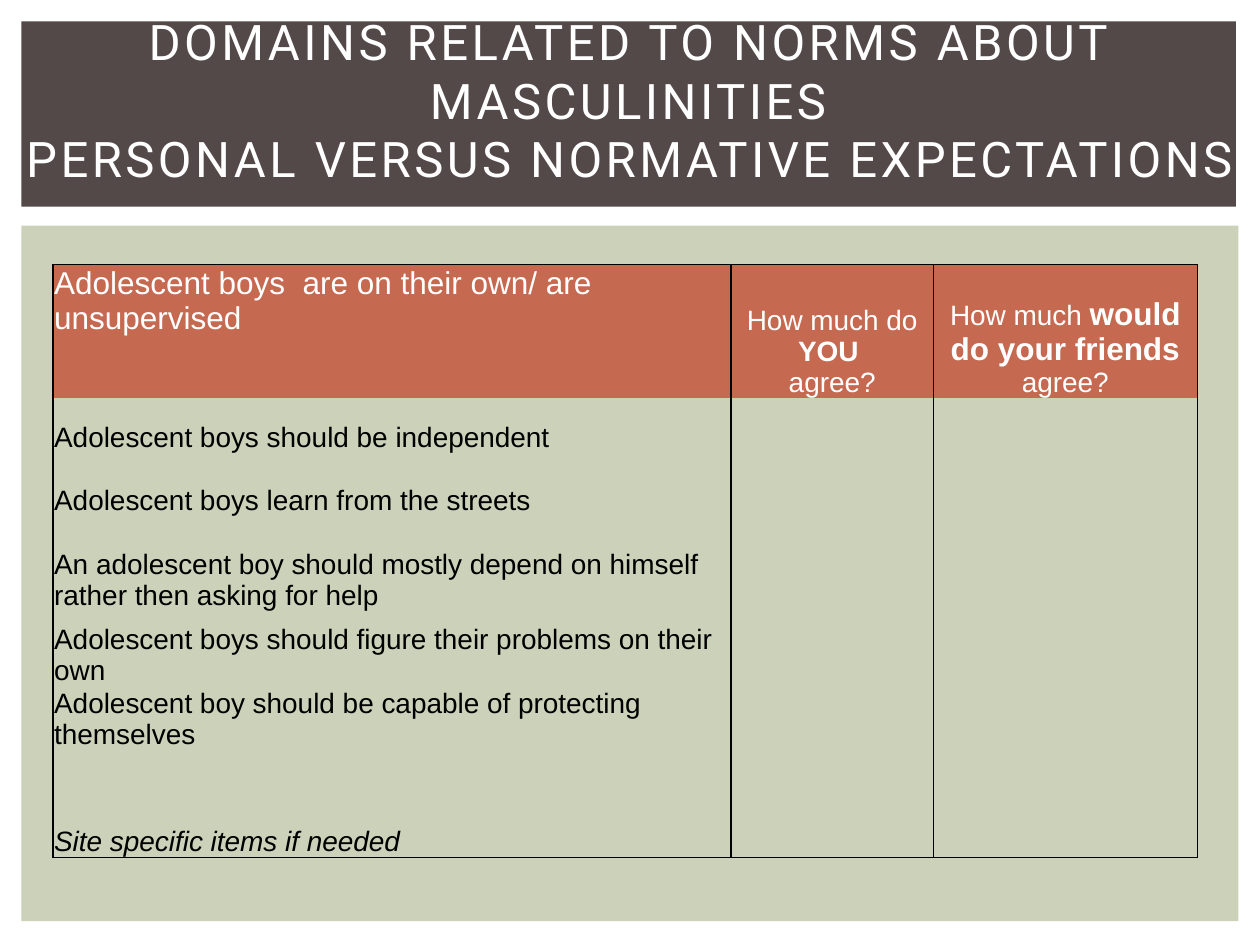
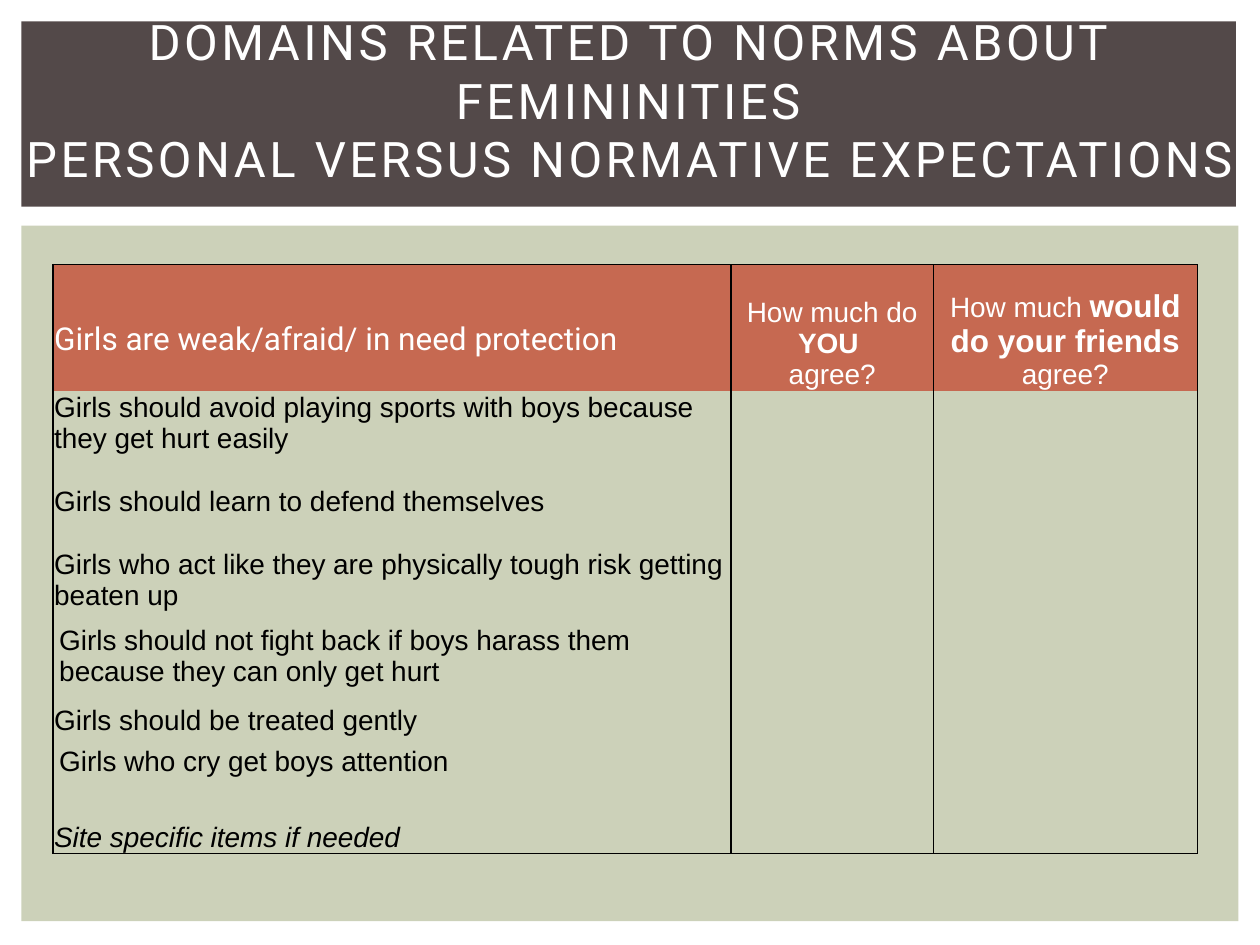
from lxml.etree import SubElement
from pptx import Presentation
from pptx.dml.color import RGBColor
from pptx.enum.shapes import MSO_SHAPE
from pptx.enum.text import MSO_ANCHOR, MSO_AUTO_SIZE, PP_ALIGN
from pptx.oxml.ns import qn
from pptx.util import Inches, Pt

SAGE, BROWN, RUST, WHITE, BLACK = "CCD1B9", "534949", "C66951", "FFFFFF", "000000"
BANDS = [(SAGE, (0.17, 1.79, 9.66, 5.52)), (BROWN, (0.17, 0.17, 9.64, 1.47))]
COLS = [5.38, 1.61, 2.09]
ASKS = [
    [[("How much do ", {}), ("YOU ", {"bold": True})], [("agree?", {})]],
    [[("How much ", {}), ("would do your friends ", {"size": 18, "bold": True}),
      ("agree?", {})]],
]
LAST = "Site specific items if needed"
TIGHT, LOOSE = (0.01, 0.01, 0.01, 0), (0.05, 0, 0.05, 0)

BOYS = {
    "group": "MASCULINITIES",
    "topic": "Adolescent boys  are on their own/ are unsupervised",
    "font": "Arial",
    "anchor": MSO_ANCHOR.TOP,
    "pad": TIGHT,
    "head": 1.06,
    "items": [
        ("Adolescent boys should be independent", 0.44, TIGHT),
        ("Adolescent boys learn from the streets", 0.5, TIGHT),
        ("An adolescent boy should mostly depend on himself rather then asking for help",
         0.75, TIGHT),
        ("Adolescent boys should figure their problems on their own", 0.6, TIGHT),
        ("Adolescent boy should be capable of protecting themselves", 0.5, TIGHT),
        (LAST, 0.85, TIGHT),
    ],
}
GIRLS = {
    "group": "FEMININITIES",
    "topic": "Girls are weak/afraid/ in need protection",
    "font": "Roboto",
    "anchor": MSO_ANCHOR.BOTTOM,
    "pad": (0.01, 0.01, 0.01, 0.26),
    "head": 1,
    "items": [
        ("Girls should avoid playing sports with boys because they get hurt easily",
         0.5, TIGHT),
        ("Girls should learn to defend themselves", 0.5, TIGHT),
        ("Girls who act like they are physically tough risk getting beaten up",
         0.75, TIGHT),
        ("Girls should not fight back if boys harass them because they can only get hurt",
         0.6, LOOSE),
        ("Girls should be treated gently", 0.39, TIGHT),
        ("Girls who cry get boys attention", 0.33, LOOSE),
        (LAST, 0.6, TIGHT),
    ],
}


def tint(code):
    """Turn a hex string into a colour."""
    return RGBColor.from_string(code)


def place(*box):
    """Turn columns and rows of the one-inch grid into lengths."""
    return [Inches(side) for side in box]


def write(para, text, size=16, font="Arial", color=BLACK, bold=False,
          italic=False, space=None):
    """Add one formatted run to a paragraph."""
    run = para.add_run()
    run.text = text
    face = run.font
    face.size, face.name, face.bold, face.italic = Pt(size), font, bold, italic
    face.color.rgb = tint(color)
    if space:
        run._r.get_or_add_rPr().set("spc", str(space * 100))


def add_bands(slide):
    """Draw the two bands and keep them in the layout."""
    for row, (color, box) in enumerate(BANDS):
        band = slide.shapes.add_shape(MSO_SHAPE.RECTANGLE, *place(*box))
        band.shadow.inherit = False
        band.fill.solid()
        band.fill.fore_color.rgb = tint(color)
        band.line.fill.background()
        slide.slide_layout.shapes.element.insert(2 + row, band.element)


def add_title(slide, group):
    """Fill and format the title."""
    title = slide.shapes.title
    title.left, title.top, title.width, title.height = place(0, 0.33, 10, 0.92)
    frame = title.text_frame
    frame.word_wrap, frame.auto_size = True, MSO_AUTO_SIZE.NONE
    frame.vertical_anchor = MSO_ANCHOR.MIDDLE
    para = frame.paragraphs[0]
    para.alignment = PP_ALIGN.CENTER
    look = {"size": 28, "font": "Roboto", "color": WHITE, "space": 2}
    write(para, f"DOMAINS RELATED TO NORMS ABOUT {group}", **look)
    para.add_line_break()
    write(para, "PERSONAL VERSUS NORMATIVE EXPECTATIONS", **look)


def edge(cell, **widths):
    """Set the four borders of a cell; a side without a width has no line."""
    props = cell._tc.get_or_add_tcPr()
    for side in "LRTB":
        width = widths.get(side, 0)
        line = SubElement(props, qn(f"a:ln{side}"), w=str(Pt(width)))
        if width:
            fill = SubElement(line, qn("a:solidFill"))
            SubElement(fill, qn("a:srgbClr"), val=BLACK)
        else:
            SubElement(line, qn("a:noFill"))


def dress(cell, row, col, last):
    """Give a cell the borders and fill of its row and column."""
    outer = 1 if col == 0 else 0.5
    edge(cell, L=0.5 if col == 2 else 1, R=outer,
         T=outer if row == 0 else 0, B=outer if row == last else 0)
    if row == 0:
        cell.fill.solid()
        cell.fill.fore_color.rgb = tint(RUST)
    else:
        cell.fill.background()


def pad(cell, sides, anchor=MSO_ANCHOR.BOTTOM):
    """Set the margins and anchor of a cell."""
    (cell.margin_left, cell.margin_top,
     cell.margin_right, cell.margin_bottom) = place(*sides)
    cell.vertical_anchor = anchor


def add_grid(slide, data):
    """Build the table of statements and questions."""
    rows = [data["head"]] + [high for _, high, _ in data["items"]]
    last = len(rows) - 1
    box = place(0.42, 2.1, sum(COLS), sum(rows))
    table = slide.shapes.add_table(len(rows), len(COLS), *box).table
    table.first_row = table.horz_banding = False
    for col, wide in zip(table.columns, COLS):
        col.width = Inches(wide)
    for row, high in enumerate(rows):
        table.rows[row].height = Inches(high)
        for col in range(len(COLS)):
            pad(table.cell(row, col), TIGHT)
            dress(table.cell(row, col), row, col, last)

    topic = table.cell(0, 0)
    pad(topic, data["pad"], data["anchor"])
    write(topic.text_frame.paragraphs[0], data["topic"], size=18,
          font=data["font"], color=WHITE)
    for col, ask in enumerate(ASKS, 1):
        frame = table.cell(0, col).text_frame
        for count, runs in enumerate(ask):
            para = frame.add_paragraph() if count else frame.paragraphs[0]
            para.alignment = PP_ALIGN.CENTER
            for text, look in runs:
                write(para, text, color=WHITE, **look)
    for row, (text, _, sides) in enumerate(data["items"], 1):
        cell = table.cell(row, 0)
        pad(cell, sides)
        write(cell.text_frame.paragraphs[0], text, italic=text == LAST)


def main():
    """Build both slides and save them."""
    deck = Presentation()
    deck.slide_width, deck.slide_height = place(10, 7.5)
    for data in (BOYS, GIRLS):
        slide = deck.slides.add_slide(deck.slide_layouts[5])
        if data is BOYS:
            add_bands(slide)
        add_title(slide, data["group"])
        add_grid(slide, data)
    deck.save("out.pptx")


if __name__ == "__main__":
    main()
